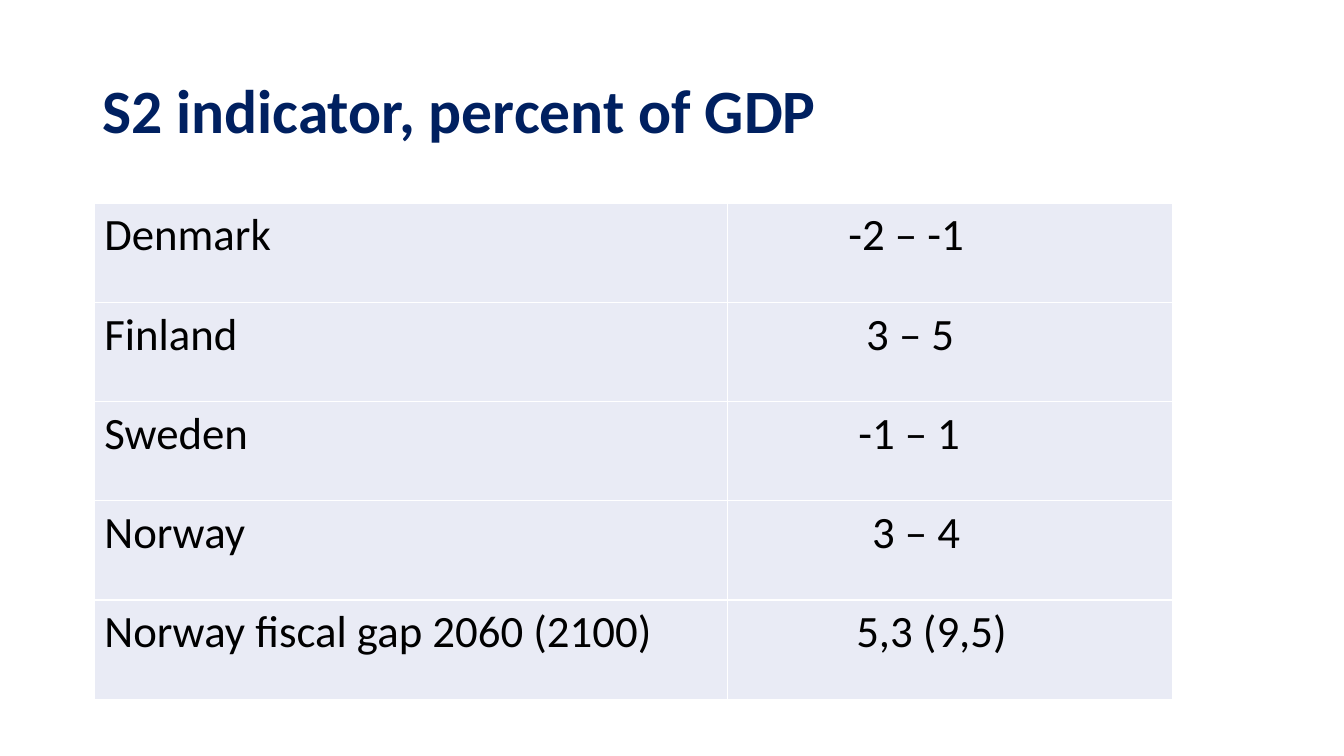
from lxml.etree import SubElement
from pptx import Presentation
from pptx.dml.color import RGBColor
from pptx.enum.text import MSO_ANCHOR
from pptx.oxml.ns import qn
from pptx.util import Cm, Pt


def style_font(font, size, color, bold=False):
    font.name = "Calibri"
    font.size = Pt(size)
    font.bold = bold
    font.color.rgb = RGBColor.from_string(color)


def add_borders(cell, color):
    properties = cell._tc.get_or_add_tcPr()
    for side in ("a:lnL", "a:lnR", "a:lnT", "a:lnB"):
        line = SubElement(properties, qn(side), w=str(Pt(1)))
        fill = SubElement(line, qn("a:solidFill"))
        SubElement(fill, qn("a:srgbClr"), val=color)


deck = Presentation()
deck.slide_width, deck.slide_height = Cm(33.87), Cm(19.05)
page = deck.slides.add_slide(deck.slide_layouts[6])

title = page.shapes.add_textbox(Cm(2.33), Cm(1.01), Cm(29.21), Cm(3.68))
title.text_frame.word_wrap = True
title.text_frame.vertical_anchor = MSO_ANCHOR.MIDDLE
para = title.text_frame.paragraphs[0]
para.text = "S2 indicator, percent of GDP"
para.line_spacing = 0.9
style_font(para.font, 44, "002060", bold=True)

# Country, S2 range, left margin of the range in cm
indicators = [
    ("Denmark", "-2 – -1", 3.05),
    ("Finland", "3 – 5", 3.5),
    ("Sweden", "-1 – 1", 3.3),
    ("Norway", "3 – 4", 3.65),
    ("Norway fiscal gap 2060 (2100)", "5,3 (9,5)", 3.25),
]
row_height = 2.5
frame = page.shapes.add_table(len(indicators), 2, Cm(2.38), Cm(5.12),
                              Cm(27.18), Cm(row_height * len(indicators)))
table = frame.table
table.first_row = table.horz_banding = False
table.columns[0].width = Cm(15.95)
table.columns[1].width = Cm(11.23)

for row, (country, value, indent) in enumerate(indicators):
    table.rows[row].height = Cm(row_height)
    for column, (text, margin) in enumerate([(country, 0.25), (value, indent)]):
        cell = table.cell(row, column)
        cell.margin_left = Cm(margin)
        add_borders(cell, "FFFFFF")
        cell.fill.solid()
        cell.fill.fore_color.rgb = RGBColor.from_string("E9EBF5")
        para = cell.text_frame.paragraphs[0]
        para.text = text
        style_font(para.font, 32, "000000")

deck.save("out.pptx")
